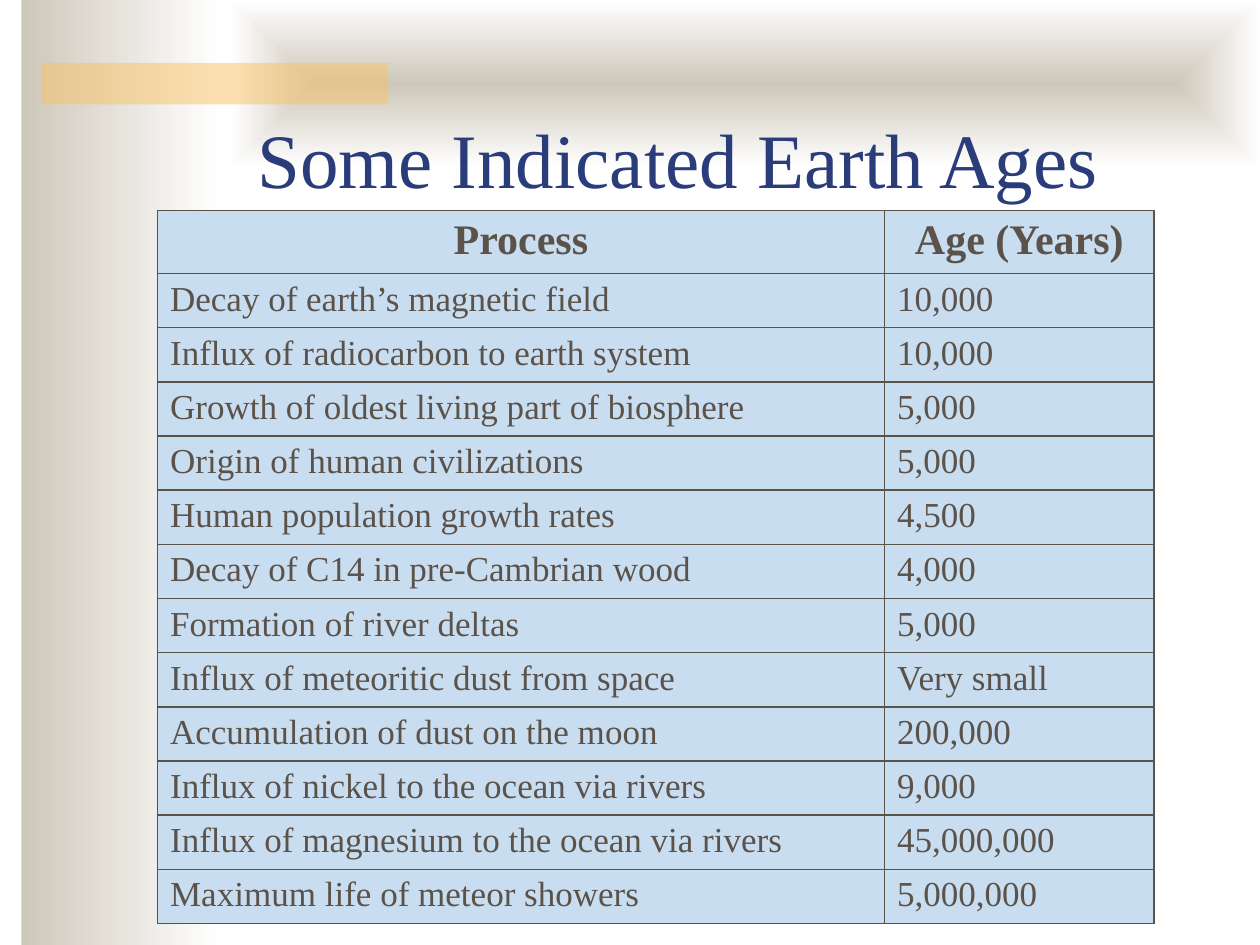
from lxml.etree import SubElement
from pptx import Presentation
from pptx.dml.color import RGBColor
from pptx.enum.shapes import MSO_SHAPE
from pptx.enum.text import MSO_ANCHOR, PP_ALIGN
from pptx.oxml import parse_xml
from pptx.oxml.ns import nsdecls, qn
from pptx.util import Inches, Pt

COLORS = {
    "sand": "CEC8BA",
    "white": "FFFFFF",
    "gold": "FAC164",
    "navy": "2A3D7A",
    "brown": "5B5249",
    "light_blue": "C9DDF1",
}
FONT = "Times New Roman"
ROWS = [
    ("Process", "Age (Years)"),
    ("Decay of earth’s magnetic field", "10,000"),
    ("Influx of radiocarbon to earth system", "10,000"),
    ("Growth of oldest living part of biosphere", "5,000"),
    ("Origin of human civilizations", "5,000"),
    ("Human population growth rates", "4,500"),
    ("Decay of C14 in pre-Cambrian wood", "4,000"),
    ("Formation of river deltas", "5,000"),
    ("Influx of meteoritic dust from space", "Very small"),
    ("Accumulation of dust on the moon", "200,000"),
    ("Influx of nickel to the ocean via rivers", "9,000"),
    ("Influx of magnesium to the ocean via rivers", "45,000,000"),
    ("Maximum life of meteor showers", "5,000,000"),
]


def add_panel(left, top, width, height):
    panel = slide.shapes.add_shape(
        MSO_SHAPE.RECTANGLE, Inches(left), Inches(top), Inches(width), Inches(height)
    )
    panel.shadow.inherit = False
    panel.line.fill.background()
    return panel


def format_text(paragraph, size, color, bold, alignment):
    paragraph.alignment = alignment
    for run in paragraph.runs:
        run.font.name = FONT
        run.font.size = Pt(size)
        run.font.bold = bold
        run.font.color.rgb = RGBColor.from_string(COLORS[color])


presentation = Presentation()
presentation.slide_width = Inches(10)
presentation.slide_height = Inches(7.5)
slide = presentation.slides.add_slide(presentation.slide_layouts[5])

side_band = add_panel(0.17, 0, 1.58, 7.5)
top_band = add_panel(1.83, 0, 8.17, 1.33)
for band in (side_band, top_band):
    band.fill.gradient()
    band.fill.gradient_angle = 0
    for stop, color in zip(band.fill.gradient_stops, ("sand", "white")):
        stop.color.rgb = RGBColor.from_string(COLORS[color])

linear = top_band.element.spPr.find(qn("a:gradFill")).find(qn("a:lin"))
linear.getparent().replace(linear, parse_xml(
    f'<a:path {nsdecls("a")} path="rect">'
    '<a:fillToRect l="50000" t="50000" r="50000" b="50000"/></a:path>'
))

gold_bar = add_panel(0.33, 0.5, 2.75, 0.33)
gold_bar.fill.solid()
gold_bar.fill.fore_color.rgb = RGBColor.from_string(COLORS["gold"])
gold_color = gold_bar.element.spPr.find(qn("a:solidFill")).find(qn("a:srgbClr"))
SubElement(gold_color, qn("a:alpha"), val="50000")

title = slide.shapes.title
title.element.getparent().append(title.element)
title.left, title.top = Inches(1.17), Inches(0.92)
title.width, title.height = Inches(8.42), Inches(0.75)
title.text_frame.text = "Some Indicated Earth Ages"
title.text_frame.vertical_anchor = MSO_ANCHOR.BOTTOM
format_text(title.text_frame.paragraphs[0], 44, "navy", False, PP_ALIGN.CENTER)

table = slide.shapes.add_table(
    len(ROWS), 2, Inches(1.25), Inches(1.67), Inches(7.91), Inches(5.7)
).table
table.columns[0].width = Inches(5.77)
table.columns[1].width = Inches(2.14)

for row_index, values in enumerate(ROWS):
    is_header = row_index == 0
    table.rows[row_index].height = Inches(0.5 if is_header else 0.43)
    for column_index, value in enumerate(values):
        cell = table.cell(row_index, column_index)
        cell.text_frame.text = value
        format_text(
            cell.text_frame.paragraphs[0], 24 if is_header else 20, "brown", is_header,
            PP_ALIGN.CENTER if is_header else PP_ALIGN.LEFT,
        )
        properties = cell._tc.get_or_add_tcPr()
        for side in ("L", "R", "T", "B"):
            border = SubElement(properties, qn(f"a:ln{side}"), w=str(Pt(1)))
            border_fill = SubElement(border, qn("a:solidFill"))
            SubElement(border_fill, qn("a:srgbClr"), val=COLORS["brown"])
        cell.fill.solid()
        cell.fill.fore_color.rgb = RGBColor.from_string(COLORS["light_blue"])

presentation.save("out.pptx")
